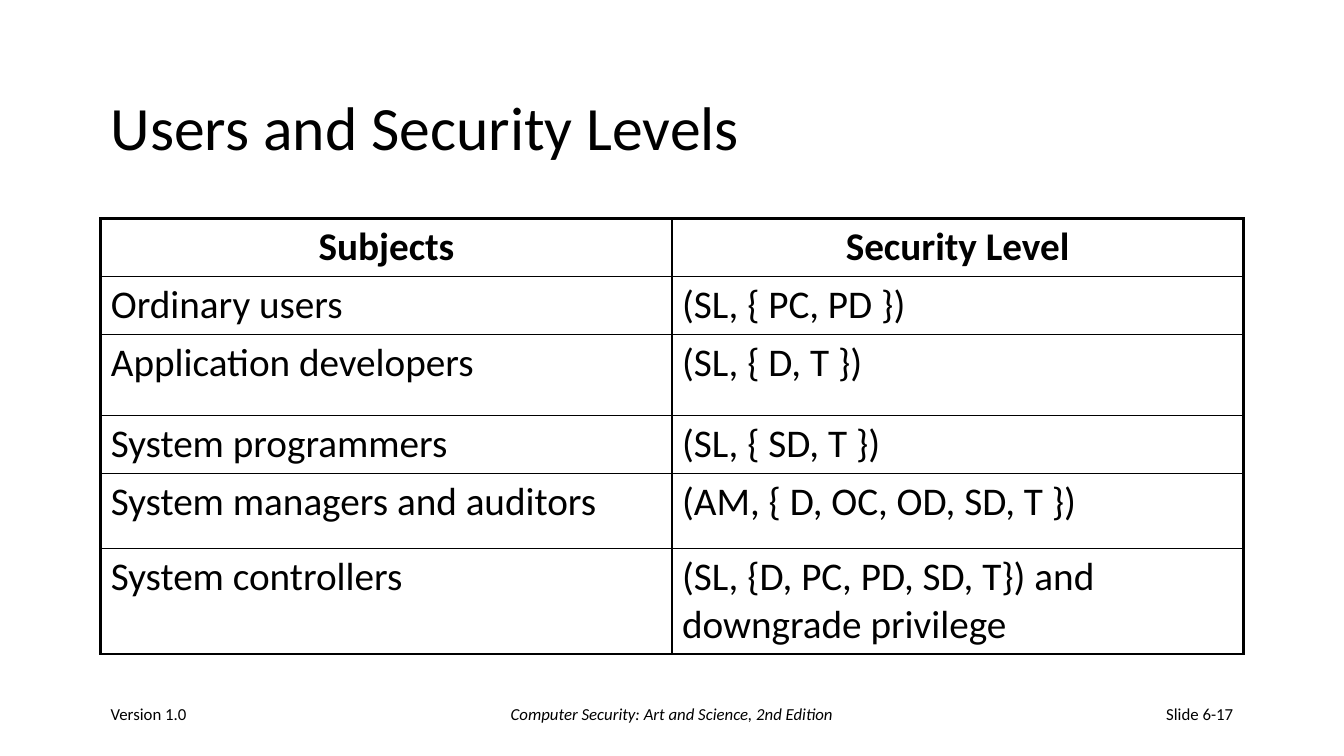
from lxml import etree
from pptx import Presentation
from pptx.dml.color import RGBColor
from pptx.enum.text import MSO_ANCHOR, PP_ALIGN
from pptx.oxml.ns import qn
from pptx.util import Pt

COLORS = {"ink": "000000"}
FONT = "Calibri"
MARGIN = 72
CONTENT_WIDTH = 816
THICK, THIN = 2.25, 1

LEVELS = [
    ("Subjects", "Security Level"),
    ("Ordinary users", "(SL, { PC, PD })"),
    ("Application developers", "(SL, { D, T })"),
    ("System programmers", "(SL, { SD, T })"),
    ("System managers and auditors", "(AM, { D, OC, OD, SD, T })"),
    ("System controllers", "(SL, {D, PC, PD, SD, T}) and downgrade privilege"),
]
ROW_HEIGHTS = [41.5, 41.5, 57.6, 41.5, 53.5, 75.6]


def style(paragraph, size, align=PP_ALIGN.LEFT, bold=False, italic=False):
    paragraph.alignment = align
    font = paragraph.font
    font.name = FONT
    font.size = Pt(size)
    font.bold = bold
    font.italic = italic
    font.color.rgb = RGBColor.from_string(COLORS["ink"])


def add_line_of_text(slide, box, text, size, **look):
    frame = slide.shapes.add_textbox(*map(Pt, box)).text_frame
    frame.word_wrap = True
    frame.vertical_anchor = MSO_ANCHOR.MIDDLE
    paragraph = frame.paragraphs[0]
    paragraph.text = text
    style(paragraph, size, **look)
    return paragraph


def set_borders(cell, widths):
    properties = cell._tc.get_or_add_tcPr()
    for position, (side, width) in enumerate(widths.items()):
        border = etree.Element(qn(f"a:ln{side}"), w=str(int(Pt(width))))
        fill = etree.SubElement(border, qn("a:solidFill"))
        etree.SubElement(fill, qn("a:srgbClr"), val=COLORS["ink"])
        properties.insert(position, border)


def add_title(slide, box):
    title = add_line_of_text(slide, box, "Users and Security Levels", 44)
    title.line_spacing = 0.9


def add_levels(slide, box):
    last_row, last_column = len(LEVELS) - 1, len(LEVELS[0]) - 1
    table = slide.shapes.add_table(last_row + 1, last_column + 1, *map(Pt, box)).table
    for column in table.columns:
        column.width = Pt(box[2] / (last_column + 1))
    for r, (entries, height) in enumerate(zip(LEVELS, ROW_HEIGHTS)):
        table.rows[r].height = Pt(height)
        for c, entry in enumerate(entries):
            cell = table.cell(r, c)
            cell.text = entry
            cell.fill.background()
            align = PP_ALIGN.CENTER if r == 0 else PP_ALIGN.LEFT
            style(cell.text_frame.paragraphs[0], 28, align, bold=r == 0)
            set_borders(cell, {
                "L": THICK if c == 0 else THIN,
                "R": THICK if c == last_column else THIN,
                "T": THICK if r == 0 else THIN,
                "B": THICK if r == last_row else THIN,
            })


def add_footer(slide, box):
    left, top, width, height = box
    side, middle = 200, 304
    add_line_of_text(slide, (left, top, side, height), "Version 1.0", 12)
    add_line_of_text(slide, (left + (width - middle) / 2, top, middle, height),
                     "Computer Security: Art and Science, 2nd Edition", 12,
                     align=PP_ALIGN.CENTER, italic=True)
    add_line_of_text(slide, (left + width - side, top, side, height),
                     "Slide 6-17", 12, align=PP_ALIGN.RIGHT)


def main():
    deck = Presentation()
    deck.slide_width, deck.slide_height = Pt(960), Pt(540)
    slide = deck.slides.add_slide(deck.slide_layouts[6])
    add_title(slide, (MARGIN, 48, CONTENT_WIDTH, 90))
    add_levels(slide, (MARGIN, 156, CONTENT_WIDTH, sum(ROW_HEIGHTS)))
    add_footer(slide, (MARGIN, 492, CONTENT_WIDTH, 36))
    deck.save("out.pptx")


if __name__ == "__main__":
    main()
